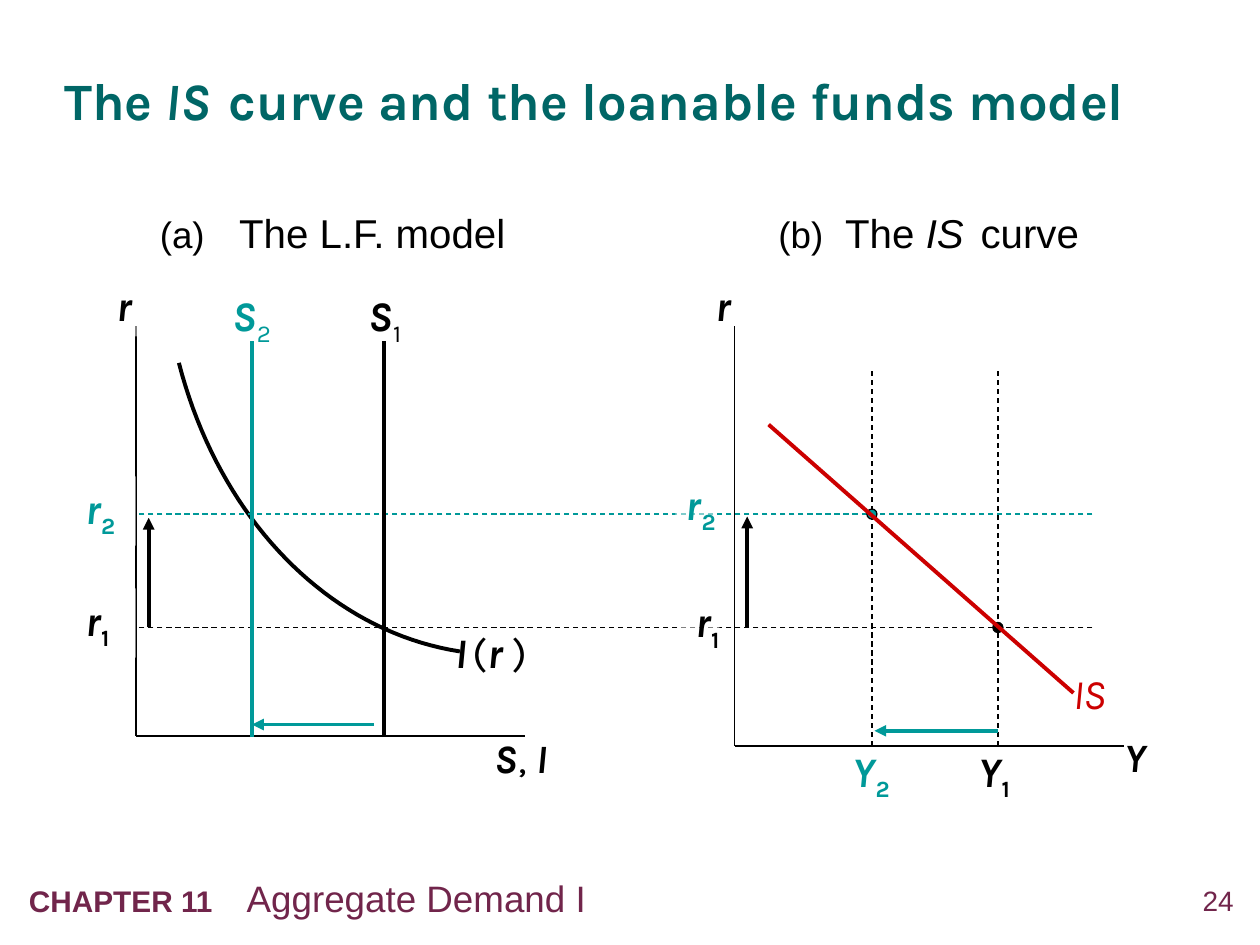
"""Build the slide that derives the IS curve from the loanable funds model."""
from lxml.etree import SubElement as Sub
from pptx import Presentation
from pptx.dml.color import RGBColor as Rgb
from pptx.enum.dml import MSO_LINE as Dash
from pptx.enum.shapes import MSO_CONNECTOR as Conn, MSO_SHAPE as Shape
from pptx.enum.text import MSO_ANCHOR as Anchor, PP_ALIGN as Align
from pptx.oxml.ns import qn
from pptx.util import Inches, Pt

HUES = {"black": "000000", "white": "FFFFFF", "teal": "009999",
        "deep": "006666", "red": "CC0000", "plum": "71254B"}

LOW, HIGH = 4.98, 4.08
Y1, Y2 = 7.92, 6.92
S1, S2 = 3.05, 2.0

DOTS = [(Y2, HIGH, "teal"), (Y1, LOW, "black")]

AXES = [(1.08, 5.84), (5.83, 5.92)]
AXIS_TOP, AXIS_LEN = 2.59, 3.09

LEVELS = [(LOW, "black"), (HIGH, "teal")]
DROPS = [Y1, Y2]
SAVINGS = [(S1, "black"), (S2, "teal")]
ARROWS = [
    ((1.18, LOW), (1.18, 4.11), "black"),
    ((5.93, LOW), (5.93, 4.1), "black"),
    ((2.97, 5.75), (S2, 5.75), "teal"),
    ((Y1, 5.8), (6.94, 5.8), "teal"),
]
IS_LINE = ((6.1, 3.37), (8.52, 5.5))
BEND = [(1.42, 2.88), (1.74, 4.12), (2.61, 5.01), (3.65, 5.17)]

PAD = (0.1, 0.05, 0.1, 0.05)
DEEP = (0.1, 0.05, 0, 0.1)
NONE = (0, 0, 0, 0)

LABELS = [
    ((3.83, 5.77, 1, 0.48), "black", [("S", 23, "bi"), (", ", 23, ""), ("I", 23, "bi")], {}),
    ((3.52, 4.92, 1.65, 0.5), "black",
     [("I", 24, "bi"), (" ", 12, "bi"), ("(", 24, ""), ("r", 24, "bi"), (" ", 24, "bi"),
      (")", 24, "")], {}),
    ((0.83, 2.17, 0.5, 0.5), "black", [("r", 24, "bi")], {"veil": True}),
    ((5.58, 2.17, 0.5, 0.5), "black", [("r", 24, "bi")], {}),
    ((8.83, 5.76, 0.5, 0.48), "black", [("Y", 23, "bi")], {}),
    ((8.42, 5.25, 0.67, 0.5), "red", [("IS", 24, "i")], {}),
]
MARKS = [
    ("r", "1", "black", (0.58, 4.67, 0.5, 0.55), {"pad": DEEP, "veil": True}),
    ("r", "2", "teal", (0.58, 3.78, 0.5, 0.55), {"pad": DEEP, "veil": True}),
    ("r", "1", "black", (5.39, 4.73, 0.32, 0.4), {"pad": NONE, "veil": True, "align": Align.RIGHT}),
    ("r", "2", "teal", (5.36, 3.8, 0.32, 0.4), {"pad": NONE, "veil": True, "align": Align.RIGHT}),
    ("Y", "1", "black", (7.67, 5.87, 0.58, 0.55), {}),
    ("Y", "2", "teal", (6.67, 5.87, 0.58, 0.55), {}),
]
STEMS = [("1", "black", 2.83), ("2", "teal", 1.75)]

HEADS = [
    ((0.51, 0.26, 9.02, 1.03), "deep",
     [("The ", 30, "b"), ("IS", 30, "bi"), (" ", 11, "b"),
      (" curve and the loanable funds model", 30, "b")],
     {"pad": NONE, "anchor": Anchor.MIDDLE, "space": 1.05}),
    ((1.17, 1.6, 3.92, 0.48), "black", [("(a)", 21, ""), ("\tThe L.F. model", 23, "")],
     {"font": "Arial", "hang": 0.63}),
    ((6.08, 1.6, 3, 0.48), "black",
     [("(b)", 21, ""), ("\tThe ", 23, ""), ("IS ", 23, "i"), (" ", 11, ""), ("curve", 23, "")],
     {"font": "Arial", "hang": 0.53}),
    ((0.13, 6.9, 8.18, 0.45), "plum", [("CHAPTER 11", 17, "b"), ("\tAggregate Demand I", 21, "")],
     {"font": "Arial", "hang": 1.73}),
    ((9.24, 7.01, 0.55, 0.32), "plum", [("24", 16, "")],
     {"font": "Arial", "pad": NONE, "align": Align.RIGHT}),
]


def hue(name):
    return Rgb.from_string(HUES[name])


def line(slide, start, end, color, width, dash=False, arrow=False):
    link = slide.shapes.add_connector(Conn.STRAIGHT, *map(Inches, start + end))
    link.line.color.rgb = hue(color)
    link.line.width = Pt(width)
    if dash:
        link.line.dash_style = Dash.DASH
    if arrow:
        Sub(link.line._get_or_add_ln(), qn("a:tailEnd"), type="triangle")
    Sub(link._element.spPr, qn("a:effectLst"))


def dot(slide, x, y, color):
    size = 0.08
    mark = slide.shapes.add_shape(
        Shape.OVAL, *map(Inches, (x - size / 2, y - size / 2, size, size)))
    mark.shadow.inherit = False
    mark.fill.solid()
    mark.fill.fore_color.rgb = hue(color)
    mark.line.color.rgb = hue("black")
    mark.line.width = Pt(0.75)


def curve(slide, knots, steps=40):
    pts = []
    for n in range(steps + 1):
        t = n / steps
        mix = ((1 - t) ** 3, 3 * t * (1 - t) ** 2, 3 * t * t * (1 - t), t ** 3)
        pts.append(tuple(Inches(sum(m * k[d] for m, k in zip(mix, knots))) for d in (0, 1)))
    pen = slide.shapes.build_freeform(*pts[0])
    pen.add_line_segments(pts[1:], close=False)
    arc = pen.convert_to_shape()
    arc.shadow.inherit = False
    arc.fill.background()
    arc.line.color.rgb = hue("black")
    arc.line.width = Pt(2.25)


def label(slide, area, color, runs, font="Karla", pad=PAD, align=Align.LEFT,
          anchor=Anchor.TOP, space=None, hang=0, veil=False):
    box = slide.shapes.add_textbox(*map(Inches, area))
    if veil:
        box.fill.solid()
        box.fill.fore_color.rgb = hue("white")
        tint = box._element.spPr.find(".//" + qn("a:srgbClr"))
        Sub(tint, qn("a:alpha"), val="50000")
    frame = box.text_frame
    frame.word_wrap = True
    frame.vertical_anchor = anchor
    (frame.margin_left, frame.margin_top,
     frame.margin_right, frame.margin_bottom) = map(Inches, pad)
    para = frame.paragraphs[0]
    para.alignment = align
    if space:
        para.line_spacing = space
    if hang:
        props = para._p.get_or_add_pPr()
        props.set("marL", str(Inches(hang)))
        props.set("indent", str(-Inches(hang)))
    for text, size, style in runs:
        run = para.add_run()
        run.text = text
        run.font.name = font
        run.font.size = Pt(size)
        run.font.bold = "b" in style
        run.font.italic = "i" in style
        run.font.color.rgb = hue(color)
        if "s" in style:
            run.font._element.set("baseline", "-25000")


def main():
    deck = Presentation()
    deck.slide_width, deck.slide_height = Inches(10), Inches(7.5)
    slide = deck.slides.add_slide(deck.slide_layouts[6])
    for x, base in AXES:
        line(slide, (x, AXIS_TOP), (x, base), "black", 1)
        line(slide, (x, base), (x + AXIS_LEN, base), "black", 1)
    curve(slide, BEND)
    for y, color in LEVELS:
        line(slide, (8.67, y), (1.08, y), color, 0.75, dash=True)
    for x in DROPS:
        line(slide, (x, 5.92), (x, 2.92), "black", 0.75, dash=True)
    for spot in DOTS:
        dot(slide, *spot)
    for x, color in SAVINGS:
        line(slide, (x, 5.85), (x, 2.71), color, 2.25)
    for start, end, color in ARROWS:
        line(slide, start, end, color, 2.25, arrow=True)
    line(slide, *IS_LINE, "red", 2.25)
    for name, sub, color, area, opts in MARKS:
        label(slide, area, color, [(name, 24, "bi"), (sub, 23, "bs")], **opts)
    for sub, color, x in STEMS:
        label(slide, (x, 2.25, 0.67, 0.5), color, [("S", 24, "bi"), (sub, 24, "s")])
    for area, color, runs, opts in LABELS + HEADS:
        label(slide, area, color, runs, **opts)
    deck.save("out.pptx")


if __name__ == "__main__":
    main()
